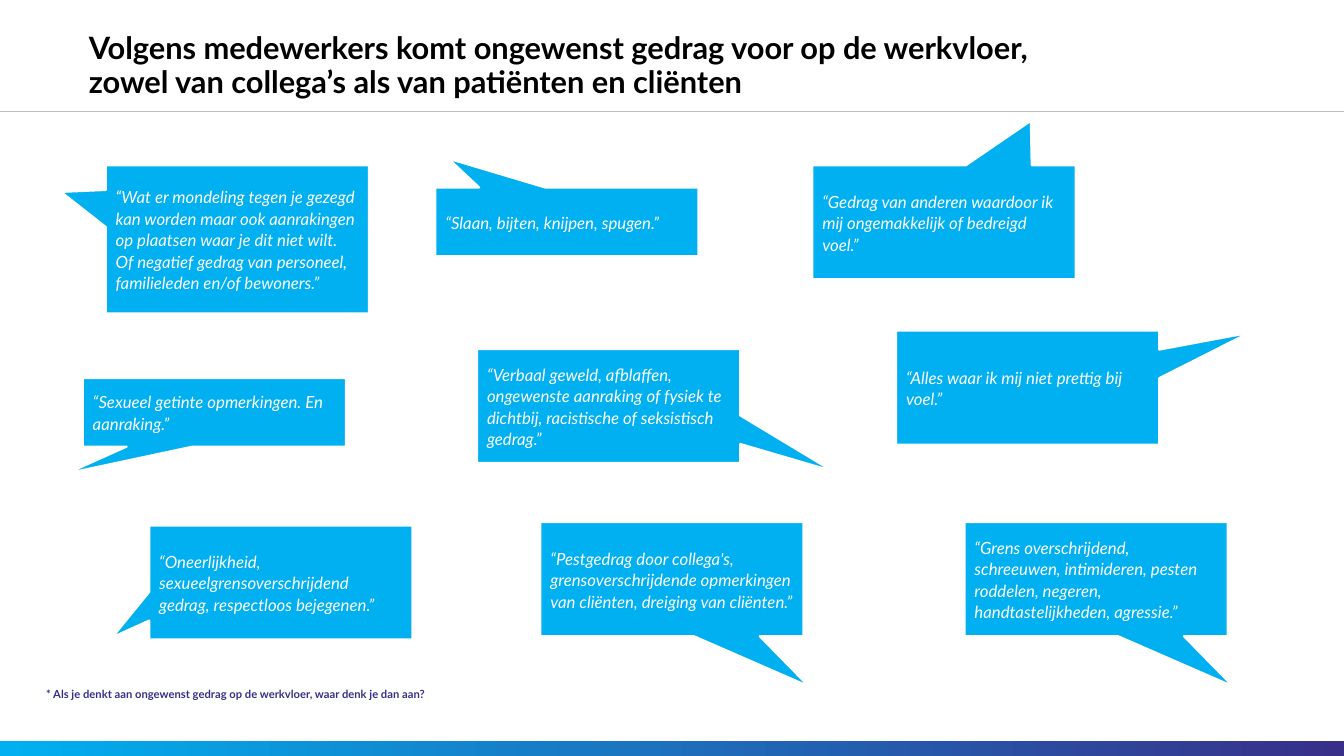
from lxml import etree
from pptx import Presentation
from pptx.dml.color import RGBColor
from pptx.enum.shapes import MSO_CONNECTOR, MSO_SHAPE
from pptx.enum.text import MSO_ANCHOR as Anchor, MSO_AUTO_SIZE as AutoSize, PP_ALIGN as Align
from pptx.oxml.ns import qn
from pptx.util import Pt

CYAN = RGBColor(0x00, 0xB0, 0xF0)
INDIGO = RGBColor(0x38, 0x2F, 0x89)
GREY = RGBColor(0xBF, 0xBF, 0xBF)
BLACK = RGBColor(0x00, 0x00, 0x00)
WHITE = RGBColor(0xFF, 0xFF, 0xFF)

SLIDE_WIDTH, SLIDE_HEIGHT = 960, 540
QUOTE_WIDTH = 188
SHORT, MEDIUM, TALL = 49, 81.4, 105.8

QUOTES = [
    (75.6, 118.1, TALL, (-0.67, -0.32),
     "“Wat er mondeling tegen je gezegd kan worden maar ook aanrakingen op plaatsen waar je dit "
     "niet wilt. Of negatief gedrag van personeel, familieleden en/of bewoners.”"),
    (340.8, 249.3, MEDIUM, (0.85, 0.57),
     "“Verbaal geweld, afblaffen, ongewenste aanraking of fysiek te dichtbij, racistische of "
     "seksistisch gedrag.”"),
    (59.2, 270, SHORT, (-0.56, 0.89), "“Sexueel getinte opmerkingen. En aanraking.”"),
    (386, 373, MEDIUM, (0.52, 0.94),
     "“Pestgedrag door collega's, grensoverschrijdende opmerkingen van cliënten, dreiging van "
     "cliënten.”"),
    (311, 133.9, SHORT, (-0.45, -0.92), "“Slaan, bijten, knijpen, spugen.”"),
    (106.6, 375.4, MEDIUM, (-0.64, 0.48),
     "“Oneerlijkheid, sexueelgrensoverschrijdend gedrag, respectloos bejegenen.”"),
    (580.3, 118.1, MEDIUM, (0.33, -0.89),
     "“Gedrag van anderen waardoor ik mij ongemakkelijk of bedreigd voel.”"),
    (689, 373, MEDIUM, (0.52, 0.94),
     "“Grens overschrijdend, schreeuwen, intimideren, pesten roddelen, negeren, "
     "handtastelijkheden, agressie.”"),
    (640.1, 236.2, MEDIUM, (0.84, -0.48), "“Alles waar ik mij niet prettig bij voel.”"),
]


class SlideBuilder:
    """Hold the font and the current slide, and add each kind of element to it."""

    font_name = "Lato"

    def __init__(self, slide):
        self.slide = slide

    def add_text(self, frame, text, size, color, bold=False, italic=False):
        frame.word_wrap = True
        frame.auto_size = AutoSize.NONE
        paragraph = frame.paragraphs[0]
        paragraph.alignment = Align.LEFT
        run = paragraph.add_run()
        run.text = text
        font = run.font
        font.name, font.size, font.color.rgb = self.font_name, Pt(size), color
        font.bold, font.italic = bold, italic
        return paragraph

    def title(self, left, top, width, height, text):
        shape = self.slide.shapes.title
        shape.left, shape.top, shape.width, shape.height = map(Pt, (left, top, width, height))
        frame = shape.text_frame
        frame.margin_left = frame.margin_right = frame.margin_top = frame.margin_bottom = 0
        frame.vertical_anchor = Anchor.BOTTOM
        paragraph = self.add_text(frame, text, 22, BLACK, bold=True)
        paragraph.line_spacing = 0.9
        paragraph.space_before = Pt(0)

    def gradient_bar(self, left, top, width, height, colors):
        shape = self.slide.shapes.add_shape(
            MSO_SHAPE.RECTANGLE, Pt(left), Pt(top), Pt(width), Pt(height))
        shape.shadow.inherit = False
        shape.line.fill.background()
        shape.fill.gradient()
        shape.fill.gradient_angle = 0
        for stop, color in zip(shape.fill.gradient_stops, colors):
            stop.color.rgb = color

    def rule(self, top):
        connector = self.slide.shapes.add_connector(
            MSO_CONNECTOR.STRAIGHT, Pt(0), Pt(top), Pt(SLIDE_WIDTH), Pt(top))
        connector.line.color.rgb = GREY
        connector.line.width = Pt(0.5)
        etree.SubElement(connector._element.spPr, qn("a:effectLst"))

    def quote(self, left, top, height, tip, text):
        shape = self.slide.shapes.add_shape(
            MSO_SHAPE.RECTANGULAR_CALLOUT, Pt(left), Pt(top), Pt(QUOTE_WIDTH), Pt(height))
        shape.adjustments[0], shape.adjustments[1] = tip
        shape.shadow.inherit = False
        shape.fill.solid()
        shape.fill.fore_color.rgb = CYAN
        shape.line.color.rgb = WHITE
        shape.line.width = Pt(1.5)
        shape.text_frame.vertical_anchor = Anchor.MIDDLE
        paragraph = self.add_text(shape.text_frame, text, 12, WHITE, italic=True)
        paragraph.line_spacing = 1.07
        paragraph.space_after = Pt(8)

    def footnote(self, left, top, width, height, text):
        shape = self.slide.shapes.add_textbox(Pt(left), Pt(top), Pt(width), Pt(height))
        self.add_text(shape.text_frame, text, 8, INDIGO, bold=True)


def main():
    presentation = Presentation()
    presentation.slide_width, presentation.slide_height = Pt(SLIDE_WIDTH), Pt(SLIDE_HEIGHT)
    builder = SlideBuilder(presentation.slides.add_slide(presentation.slide_layouts[5]))
    builder.gradient_bar(0, 529.2, SLIDE_WIDTH, 10.8, (CYAN, INDIGO))
    builder.rule(79.2)
    for quote in QUOTES:
        builder.quote(*quote)
    builder.footnote(
        25.9, 487.4, 830.9, 28.8,
        "* Als je denkt aan ongewenst gedrag op de werkvloer, waar denk je dan aan?")
    builder.title(
        63.4, 24.5, 724.3, 46.8,
        "Volgens medewerkers komt ongewenst gedrag voor op de werkvloer, "
        "zowel van collega’s als van patiënten en cliënten")
    presentation.save("out.pptx")


if __name__ == "__main__":
    main()
